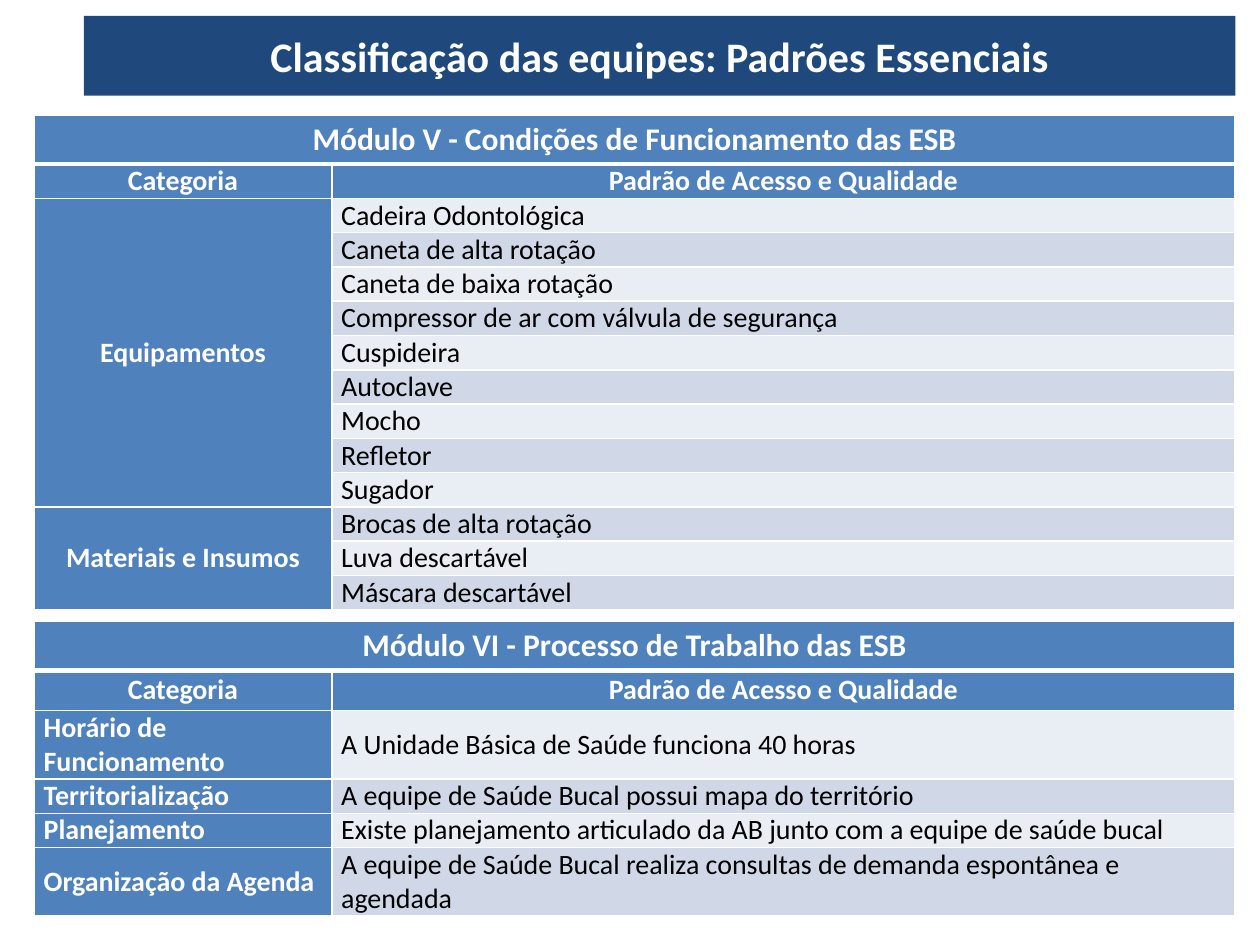
from lxml.etree import SubElement
from pptx import Presentation
from pptx.dml.color import RGBColor
from pptx.enum.shapes import MSO_SHAPE as Shape
from pptx.enum.text import MSO_ANCHOR as Anchor, PP_ALIGN as Align
from pptx.oxml.ns import qn
from pptx.util import Pt

WHITE = RGBColor(0xFF, 0xFF, 0xFF)
BLACK = RGBColor(0, 0, 0)
NAVY = RGBColor(0x1F, 0x49, 0x7D)
BLUE = RGBColor(0x4F, 0x81, 0xBD)
LIGHT = RGBColor(0xE9, 0xED, 0xF4)
DARK = RGBColor(0xD0, 0xD8, 0xE8)

LEFT = 19.6
COLS = (170, 516.2)
HEAD = 28
LINE = 19.26
HEADS = ("Categoria", "Padrão de Acesso e Qualidade")

GEAR = [
    ("Equipamentos", [
        "Cadeira Odontológica", "Caneta de alta rotação",
        "Caneta de baixa rotação",
        "Compressor de ar com válvula de segurança", "Cuspideira",
        "Autoclave", "Mocho", "Refletor", "Sugador"]),
    ("Materiais e Insumos", [
        "Brocas de alta rotação", "Luva descartável",
        "Máscara descartável"]),
]
WORK = [
    ("Horário de Funcionamento",
     ["A Unidade Básica de Saúde funciona 40 horas"]),
    ("Territorialização",
     ["A equipe de Saúde Bucal possui mapa do território"]),
    ("Planejamento",
     ["Existe planejamento articulado da AB junto com a equipe de "
      "saúde bucal"]),
    ("Organização da Agenda",
     ["A equipe de Saúde Bucal realiza consultas de demanda espontânea "
      "e agendada"]),
]


class Deck:
    font = "Calibri"

    def __init__(self):
        self.prs = Presentation()
        self.prs.slide_width, self.prs.slide_height = Pt(720), Pt(540)
        self.slide = self.prs.slides.add_slide(self.prs.slide_layouts[6])

    def label(self, frame, text, size, color=WHITE, bold=True,
              align=Align.CENTER):
        frame.text = text
        para = frame.paragraphs[0]
        para.alignment = align
        for run in para.runs:
            font = run.font
            font.name, font.size, font.bold = self.font, Pt(size), bold
            font.color.rgb = color

    def banner(self, text, left, top, width, height):
        box = self.slide.shapes.add_shape(
            Shape.RECTANGLE, Pt(left), Pt(top), Pt(width), Pt(height))
        box.shadow.inherit = False
        box.fill.solid()
        box.fill.fore_color.rgb = NAVY
        box.line.fill.background()
        box.text_frame.word_wrap = True
        box.text_frame.vertical_anchor = Anchor.MIDDLE
        self.label(box.text_frame, text, 24)

    def edge(self, cell, row):
        """Draw white borders, thick between the title row and the next."""
        props = cell._tc.get_or_add_tcPr()
        thick = {(0, "B"), (1, "T")}
        for side in "LRTB":
            width = Pt(3 if (row, side) in thick else 1)
            line = SubElement(props, qn(f"a:ln{side}"), w=str(width))
            fill = SubElement(line, qn("a:solidFill"))
            SubElement(fill, qn("a:srgbClr"), val=str(WHITE))

    def table(self, title, groups, top, heights, align):
        """Build a titled table; each group is a category and its items."""
        grid = self.slide.shapes.add_table(
            len(heights), len(COLS), Pt(LEFT), Pt(top), Pt(sum(COLS)),
            Pt(sum(heights))).table
        for col, width in zip(grid.columns, COLS):
            col.width = Pt(width)
        for i, (row, height) in enumerate(zip(grid.rows, heights)):
            row.height = Pt(height)
            for j, cell in enumerate(row.cells):
                cell.margin_left = cell.margin_right = Pt(5.4)
                cell.margin_top = cell.margin_bottom = 0
                cell.vertical_anchor = Anchor.MIDDLE
                self.edge(cell, i)
                cell.fill.solid()
                band = DARK if i % 2 else LIGHT
                cell.fill.fore_color.rgb = BLUE if i < 2 or j == 0 else band
        grid.cell(0, 0).merge(grid.cell(0, 1))
        self.label(grid.cell(0, 0).text_frame, title, 18)
        for j, text in enumerate(HEADS):
            self.label(grid.cell(1, j).text_frame, text, 16)
        first = 2
        for name, items in groups:
            if len(items) > 1:
                grid.cell(first, 0).merge(grid.cell(first + len(items) - 1, 0))
            self.label(grid.cell(first, 0).text_frame, name, 16, align=align)
            for i, item in enumerate(items, first):
                self.label(grid.cell(i, 1).text_frame, item, 16, BLACK,
                           False, Align.LEFT)
            first += len(items)


def main():
    deck = Deck()
    deck.table("Módulo V - Condições de Funcionamento das ESB", GEAR, 65.8,
               [HEAD] + [LINE] * 13, Align.CENTER)
    deck.banner("Classificação das equipes: Padrões Essenciais",
                48, 9, 658, 45.6)
    deck.table("Módulo VI - Processo de Trabalho das ESB", WORK, 355,
               [HEAD, 23, 2 * LINE, LINE, LINE, 2 * LINE], Align.LEFT)
    deck.prs.save("out.pptx")


if __name__ == "__main__":
    main()
